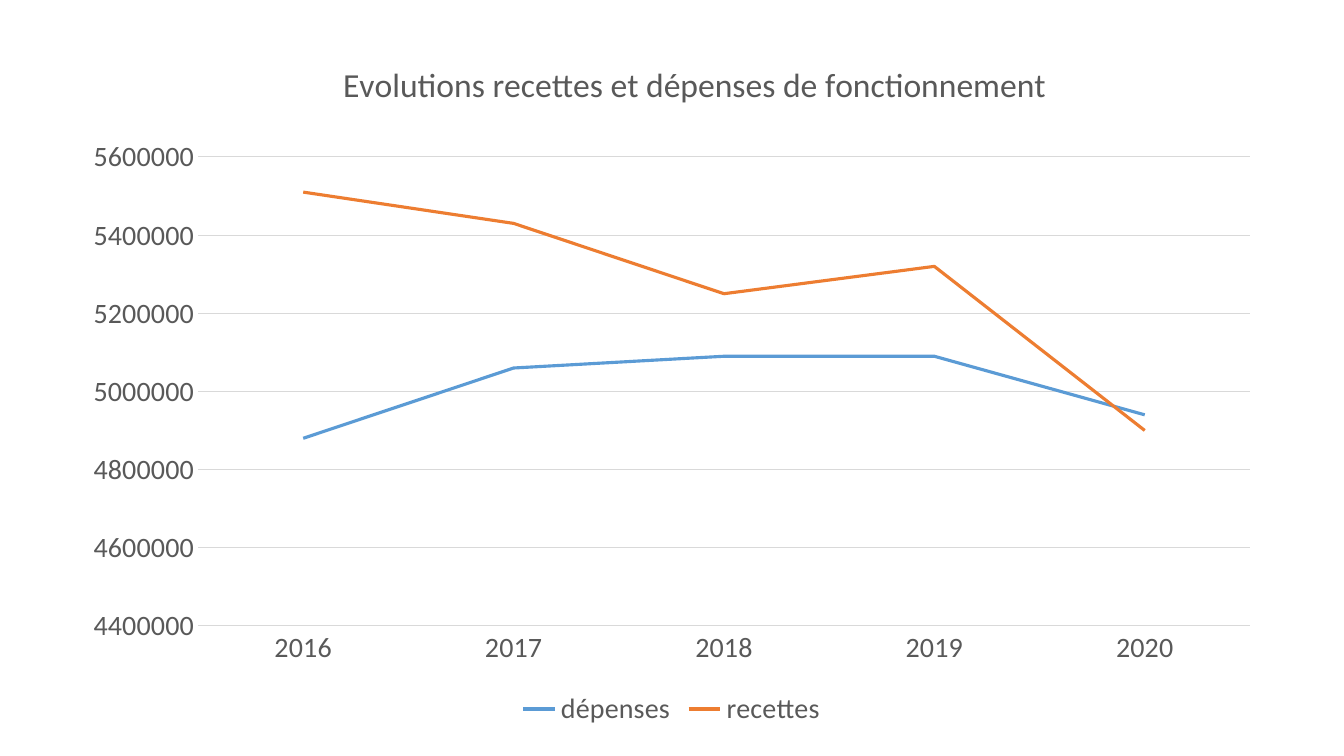
from dataclasses import dataclass

from lxml import etree
from pptx import Presentation
from pptx import util as u
from pptx.chart.data import CategoryChartData
from pptx.dml.color import RGBColor
from pptx.enum import chart as kinds
from pptx.oxml.ns import qn

EMU_PER_PX = 914400 / 100.8
SLIDE_SIZE = (1344, 756)
CHART_AREA = (69, 46, 1205, 686)
PLOT_AREA = (198, 157, 1052, 469)
TITLE_CORNER = (337, 56)

TITLE = "Evolutions recettes et dépenses de fonctionnement"
YEARS = ["2016", "2017", "2018", "2019", "2020"]
SERIES = {
    "dépenses": [4880000, 5060000, 5090000, 5090000, 4940000],
    "recettes": [5510000, 5430000, 5250000, 5320000, 4900000],
}


@dataclass(frozen=True)
class Theme:
    font: str = "Calibri"
    text: str = "595959"
    rule: str = "D9D9D9"
    lines: tuple = ("5B9BD5", "ED7D31")
    title_size: int = 24
    label_size: int = 20
    rule_width: float = 0.75
    line_width: float = 2.25


THEME = Theme()


def px(length):
    return u.Emu(round(length * EMU_PER_PX))


def style_font(font, size):
    font.name = THEME.font
    font.size = u.Pt(size)
    font.bold = False
    font.color.rgb = RGBColor.from_string(THEME.text)


def style_line(line, color, width):
    line.color.rgb = RGBColor.from_string(color)
    line.width = u.Pt(width)


def place(element, index, corner, size=None):
    """Fix a chart part at slide pixels, as fractions of the chart area."""
    left, top, width, height = CHART_AREA
    settings = {"xMode": "edge", "yMode": "edge"}
    if size:
        settings = {"layoutTarget": "inner", **settings}
    settings["x"] = round((corner[0] - left) / width, 4)
    settings["y"] = round((corner[1] - top) / height, 4)
    if size:
        settings["w"] = round(size[0] / width, 4)
        settings["h"] = round(size[1] / height, 4)
    for old in element.findall(qn("c:layout")):
        element.remove(old)
    layout = etree.Element(qn("c:layout"))
    manual = etree.SubElement(layout, qn("c:manualLayout"))
    for name, value in settings.items():
        etree.SubElement(manual, qn(f"c:{name}")).set("val", str(value))
    element.insert(index, layout)


def add_line_chart(page):
    data = CategoryChartData(number_format="General")
    data.categories = YEARS
    for name, values in SERIES.items():
        data.add_series(name, values)
    frame = page.shapes.add_chart(
        kinds.XL_CHART_TYPE.LINE, *map(px, CHART_AREA), data)
    chart = frame.chart
    style_font(chart.font, THEME.label_size)
    chart.plots[0].vary_by_categories = False
    for series, color in zip(chart.plots[0].series, THEME.lines):
        series.smooth = False
        series.marker.style = kinds.XL_MARKER_STYLE.NONE
        style_line(series.format.line, color, THEME.line_width)
    place(chart.plots[0]._element.getparent(), 0, PLOT_AREA[:2], PLOT_AREA[2:])
    return chart


def add_title(chart):
    chart.has_title = True
    title = chart.chart_title
    title.include_in_layout = False
    para = title.text_frame.paragraphs[0]
    para.text = TITLE
    style_font(para.font, THEME.title_size)
    place(title._element, 1, TITLE_CORNER)


def style_axes(chart):
    years, amounts = chart.category_axis, chart.value_axis
    for axis in (years, amounts):
        axis.major_tick_mark = kinds.XL_TICK_MARK.NONE
        axis.minor_tick_mark = kinds.XL_TICK_MARK.NONE
        style_font(axis.tick_labels.font, THEME.label_size)
    style_line(years.format.line, THEME.rule, THEME.rule_width)
    amounts.format.line.fill.background()
    amounts.minimum_scale = 4400000
    amounts.maximum_scale = 5600000
    amounts.major_unit = 200000
    amounts.has_major_gridlines = True
    style_line(amounts.major_gridlines.format.line, THEME.rule, THEME.rule_width)


def add_legend(chart):
    chart.has_legend = True
    chart.legend.position = kinds.XL_LEGEND_POSITION.BOTTOM
    chart.legend.include_in_layout = False
    style_font(chart.legend.font, THEME.label_size)


def main():
    deck = Presentation()
    deck.slide_width, deck.slide_height = map(px, SLIDE_SIZE)
    page = deck.slides.add_slide(deck.slide_layouts[6])

    # Chart with its title, axes and legend
    chart = add_line_chart(page)
    add_title(chart)
    style_axes(chart)
    add_legend(chart)

    deck.save("out.pptx")


if __name__ == "__main__":
    main()
